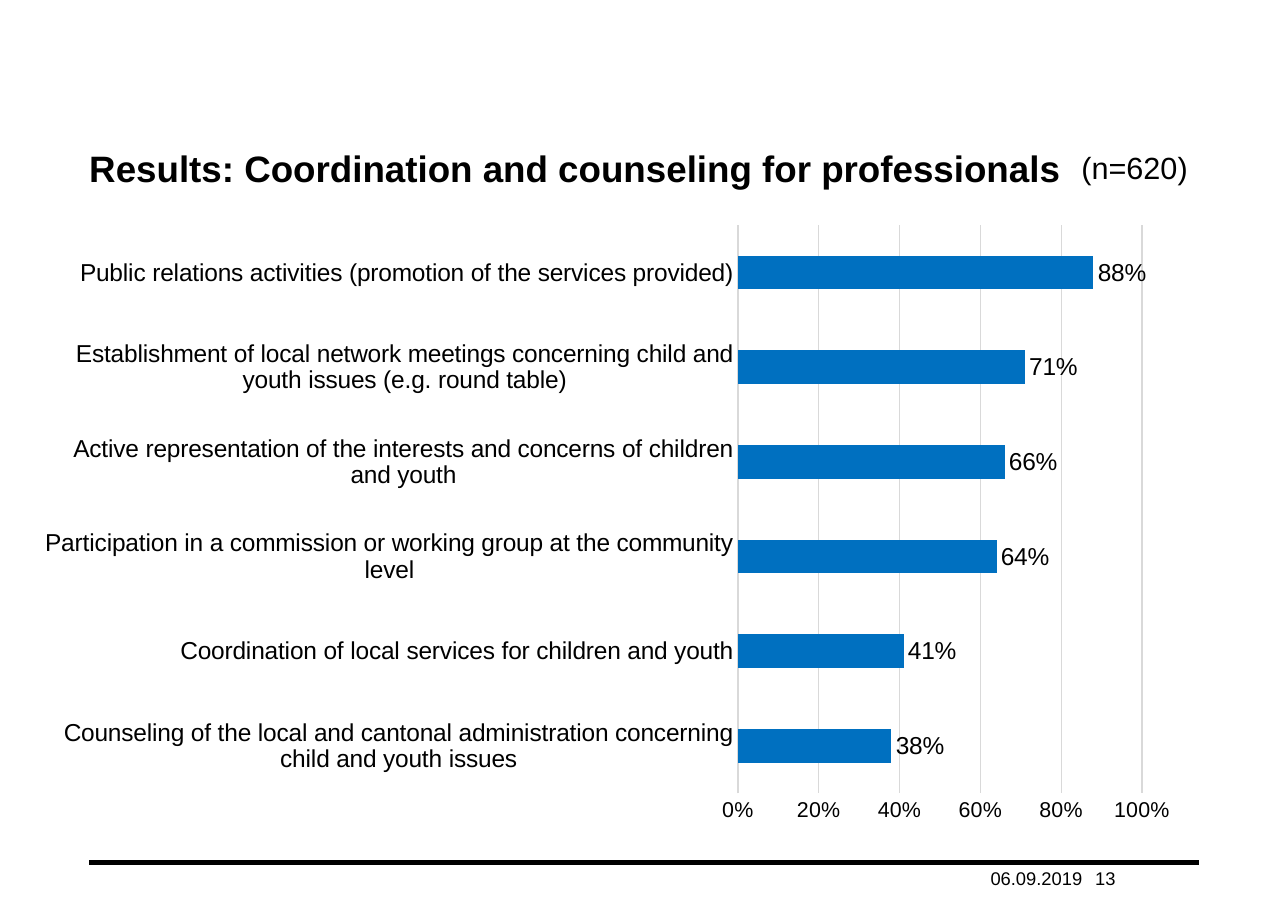
from lxml import etree
from pptx import Presentation
from pptx import util as u
from pptx.chart.data import CategoryChartData
from pptx.dml.color import RGBColor
from pptx.enum import chart as ch
from pptx.enum import shapes, text
from pptx.oxml import parse_xml
from pptx.oxml.ns import nsdecls, qn

PX = 9144  # 100 px to the inch
BLACK = RGBColor(0x00, 0x00, 0x00)
BLUE = RGBColor(0x00, 0x70, 0xC0)
GREY = RGBColor(0xD9, 0xD9, 0xD9)

ACTIVITIES = [
    ("Counseling of the local and cantonal administration concerning child and youth issues", 0.38),
    ("Coordination of local services for children and youth", 0.41),
    ("Participation in a commission or working group at the community level", 0.64),
    ("Active representation of the interests and concerns of children and youth", 0.66),
    ("Establishment of local network meetings concerning child and youth issues (e.g. round table)", 0.71),
    ("Public relations activities (promotion of the services provided)", 0.88),
]


def set_font(font, size, bold=False):
    font.name = "Arial"
    font.size = u.Pt(size)
    font.bold = bold
    font.color.rgb = BLACK


def write(shape, box, wording, size, bold=False, align=text.PP_ALIGN.LEFT,
          anchor=text.MSO_ANCHOR.TOP, margins=(0, 0), wrap=True):
    """Place a shape and fill it; margins are horizontal and vertical px."""
    shape.left, shape.top, shape.width, shape.height = [v * PX for v in box]
    frame = shape.text_frame
    frame.auto_size = text.MSO_AUTO_SIZE.NONE
    frame.word_wrap = wrap
    frame.vertical_anchor = anchor
    frame.margin_left = frame.margin_right = margins[0] * PX
    frame.margin_top = frame.margin_bottom = margins[1] * PX
    paragraph = frame.paragraphs[0]
    paragraph.alignment = align
    run = paragraph.add_run()
    run.text = wording
    set_font(run.font, size, bold)


prs = Presentation()
prs.slide_width, prs.slide_height = 1169 * PX, 827 * PX
slide = prs.slides.add_slide(prs.slide_layouts[5])

# Heading and sample size
write(slide.shapes.title, (81, 132, 1008, 40),
      "Results: Coordination and counseling for professionals", 24, bold=True)
write(slide.shapes.add_textbox(0, 0, 0, 0), (971, 130, 117, 44), "(n=620)", 20,
      align=text.PP_ALIGN.RIGHT, margins=(10, 5), wrap=False)

# Footer
rule = slide.shapes.add_connector(shapes.MSO_CONNECTOR.STRAIGHT,
                                  81 * PX, 783 * PX, 1088 * PX, 783 * PX)
rule.line.color.rgb = BLACK
rule.line.width = u.Pt(3)
etree.SubElement(rule.element.spPr, qn("a:effectLst"))
for left, wording in [(899, "06.09.2019"), (994, "13")]:
    write(slide.shapes.add_textbox(0, 0, 0, 0), (left, 787, 95, 20), wording, 12,
          anchor=text.MSO_ANCHOR.BOTTOM)

# Share of respondents per activity
data = CategoryChartData(number_format="0%")
data.categories = [activity for activity, share in ACTIVITIES]
data.add_series("Series 1", [share for activity, share in ACTIVITIES])
chart = slide.shapes.add_chart(ch.XL_CHART_TYPE.BAR_CLUSTERED, 41 * PX, 193 * PX,
                               1048 * PX, 567 * PX, data).chart
chart.has_legend = False
chart.has_title = False
set_font(chart.font, 11)

plot = chart.plots[0]
plot.gap_width = 182
plot.vary_by_categories = False
bars = plot.series[0]
bars.format.fill.solid()
bars.format.fill.fore_color.rgb = BLUE
plot.has_data_labels = True
labels = plot.data_labels
labels.show_value = True
labels.number_format = "0%"
labels.number_format_is_linked = False
labels.position = ch.XL_LABEL_POSITION.OUTSIDE_END
set_font(labels.font, 16)

activity_axis, share_axis = chart.category_axis, chart.value_axis
for axis, size in [(activity_axis, 16), (share_axis, 14)]:
    axis.major_tick_mark = axis.minor_tick_mark = ch.XL_TICK_MARK.NONE
    set_font(axis.tick_labels.font, size)
share_axis.minimum_scale, share_axis.maximum_scale = 0, 1
share_axis.major_unit = 0.2
share_axis.tick_labels.number_format = "0%"
share_axis.tick_labels.number_format_is_linked = False
share_axis.format.line.fill.background()
share_axis.has_major_gridlines = True
for line in (activity_axis.format.line, share_axis.major_gridlines.format.line):
    line.color.rgb = GREY
    line.width = u.Pt(0.75)

# Fixed plot area, leaving the left side to the long activity names
plot_area = chart.element.find(".//" + qn("c:plotArea"))
for automatic in plot_area.findall(qn("c:layout")):
    plot_area.remove(automatic)
plot_area.insert(0, parse_xml(
    f'<c:layout {nsdecls("c")}><c:manualLayout><c:layoutTarget val="inner"/>'
    '<c:xMode val="edge"/><c:yMode val="edge"/>'
    '<c:x val="0.6"/><c:y val="0.02"/><c:w val="0.35"/><c:h val="0.91"/>'
    '</c:manualLayout></c:layout>'))

prs.save("out.pptx")
